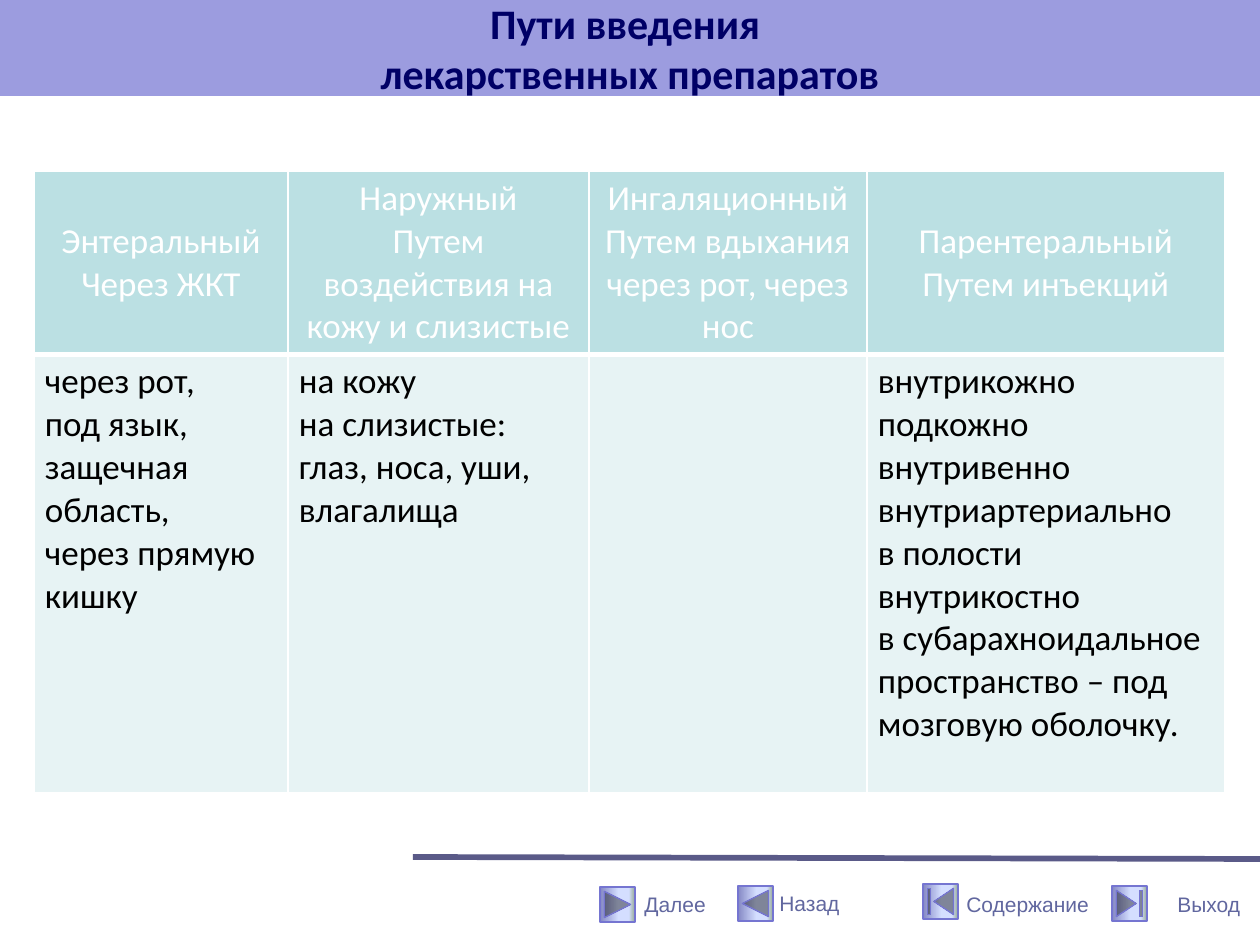
from lxml.etree import SubElement
from pptx import Presentation
from pptx.dml.color import RGBColor
from pptx.enum.shapes import MSO_CONNECTOR, MSO_SHAPE
from pptx.enum.text import MSO_ANCHOR, MSO_AUTO_SIZE, PP_ALIGN
from pptx.oxml import parse_xml
from pptx.oxml.ns import nsdecls, qn
from pptx.util import Pt

SCALE = 914400 / 126
COLORS = {
    "banner": "9C9CDF", "title": "000066", "header": "BBE0E3", "body": "E7F3F4",
    "white": "FFFFFF", "black": "000000", "rule": "5A5A88", "edge": "7575D1",
    "label": "61679F",
}
BUTTON_STOPS = [(0, "8488C4"), (53, "D4DEFF"), (83, "D4DEFF"), (100, "96AB94")]
HEADERS = [
    ["Энтеральный", "Через ЖКТ"],
    ["Наружный", "Путем воздействия на кожу и слизистые"],
    ["Ингаляционный", "Путем вдыхания через рот, через нос"],
    ["Парентеральный", "Путем инъекций"],
]
ROUTES = [
    ["через рот,", "под язык,", "защечная область,", "через прямую кишку"],
    ["на кожу", "на слизистые: глаз, носа, уши, влагалища"],
    [],
    ["внутрикожно", "подкожно", "внутривенно", "внутриартериально", "в полости",
     "внутрикостно", "в субарахноидальное пространство – под мозговую оболочку."],
]
COLUMN_WIDTHS = [254, 301, 278, 358]
ROW_HEIGHTS = [183, 438]
BUTTONS = [
    (MSO_SHAPE.ACTION_BUTTON_FORWARD_OR_NEXT, "Далее", 187, 30, 219, 28, 87),
    (MSO_SHAPE.ACTION_BUTTON_BACK_OR_PREVIOUS, "Назад", 325, 29, 354, 27, 86),
    (MSO_SHAPE.ACTION_BUTTON_BEGINNING, "Содержание", 510, 27, 541, 28, 149),
    (MSO_SHAPE.ACTION_BUTTON_END, "Выход", 699, 29, 752, 28, 95),
]


def px(*values):
    """Turn pixel lengths into a list of EMU lengths."""
    return [round(value * SCALE) for value in values]


def color(name):
    """Return a named colour."""
    return RGBColor.from_string(COLORS[name])


def style(paragraph, size, font, name, bold=False):
    """Set the font of a whole paragraph."""
    paragraph.font.size = Pt(size)
    paragraph.font.name = font
    paragraph.font.bold = bold
    paragraph.font.color.rgb = color(name)


def add_banner(page, left, top, width, height):
    """Place the title on its coloured band."""
    title = page.shapes.title
    title.left, title.top, title.width, title.height = px(left, top, width, height)
    title.fill.solid()
    title.fill.fore_color.rgb = color("banner")
    frame = title.text_frame
    frame.auto_size = MSO_AUTO_SIZE.NONE
    frame.vertical_anchor = MSO_ANCHOR.MIDDLE
    frame.text = "Пути введения \vлекарственных препаратов"
    paragraph = frame.paragraphs[0]
    paragraph.alignment = PP_ALIGN.CENTER
    style(paragraph, 24, "Calibri", "title", bold=True)


def set_borders(cell, top, bottom):
    """Give a cell white borders, with top and bottom widths in points."""
    properties = cell._tc.get_or_add_tcPr()
    widths = {"lnL": 1, "lnR": 1, "lnT": top, "lnB": bottom}
    for index, (side, width) in enumerate(widths.items()):
        border = parse_xml(
            f'<a:{side} {nsdecls("a")} w="{Pt(width)}"><a:solidFill>'
            f'<a:srgbClr val="{COLORS["white"]}"/></a:solidFill></a:{side}>')
        properties.insert(index, border)


def fill_cell(cell, lines, is_header):
    """Write the lines of one cell and format it."""
    cell.fill.solid()
    cell.fill.fore_color.rgb = color("header" if is_header else "body")
    set_borders(cell, *((1, 3) if is_header else (3, 1)))
    cell.vertical_anchor = MSO_ANCHOR.MIDDLE if is_header else MSO_ANCHOR.TOP
    cell.margin_left = cell.margin_right = px(11)[0]
    cell.margin_top = cell.margin_bottom = px(6)[0]
    cell.text = "\n".join(lines)
    for paragraph in cell.text_frame.paragraphs:
        paragraph.alignment = PP_ALIGN.CENTER if is_header else PP_ALIGN.LEFT
        style(paragraph, 20, "Calibri", "white" if is_header else "black")


def add_routes_table(page, left, top):
    """Place the table of administration routes."""
    size = px(left, top, sum(COLUMN_WIDTHS), sum(ROW_HEIGHTS))
    table = page.shapes.add_table(2, len(HEADERS), *size).table
    for column, width in zip(table.columns, px(*COLUMN_WIDTHS)):
        column.width = width
    for row, height in zip(table.rows, px(*ROW_HEIGHTS)):
        row.height = height
    for row_index, contents in enumerate([HEADERS, ROUTES]):
        for column_index, lines in enumerate(contents):
            fill_cell(table.cell(row_index, column_index), lines, row_index == 0)


def add_button(page, kind, left, top):
    """Place one navigation button with a gradient fill."""
    button = page.shapes.add_shape(kind, *px(left, top, 35, 35))
    button.shadow.inherit = False
    button.fill.gradient()
    button.fill.gradient_angle = 0
    stops = button._element.spPr.find(qn("a:gradFill")).find(qn("a:gsLst"))
    stops.clear()
    for position, value in BUTTON_STOPS:
        stop = SubElement(stops, qn("a:gs"), pos=str(position * 1000))
        SubElement(stop, qn("a:srgbClr"), val=value)
    button.line.color.rgb = color("edge")
    button.line.width = Pt(0.75)


def add_label(page, text, left, top, width):
    """Place the label of a navigation button."""
    box = page.shapes.add_textbox(*px(left, top, width, 38))
    frame = box.text_frame
    frame.word_wrap = False
    frame.vertical_anchor = MSO_ANCHOR.MIDDLE
    frame.text = text
    style(frame.paragraphs[0], 12, "Arial", "label")


def add_navigation(page, left, top, width):
    """Place the rule and the navigation buttons under it."""
    rule = page.shapes.add_connector(
        MSO_CONNECTOR.STRAIGHT, *px(left, top, left + width, top + 2))
    rule.line.color.rgb = color("rule")
    rule.line.width = Pt(3.25)
    SubElement(rule._element.spPr, qn("a:effectLst"))
    for kind, text, button_x, button_y, label_x, label_y, label_width in BUTTONS:
        add_button(page, kind, left + button_x, top + button_y)
        add_label(page, text, left + label_x, top + label_y, label_width)


def main():
    """Build the slide and save the deck."""
    deck = Presentation()
    deck.slide_width, deck.slide_height = px(1260, 945)
    page = deck.slides.add_slide(deck.slide_layouts[5])
    add_banner(page, 0, 0, 1260, 96)
    add_routes_table(page, 34, 171)
    add_navigation(page, 413, 857, 847)
    deck.save("out.pptx")


if __name__ == "__main__":
    main()
